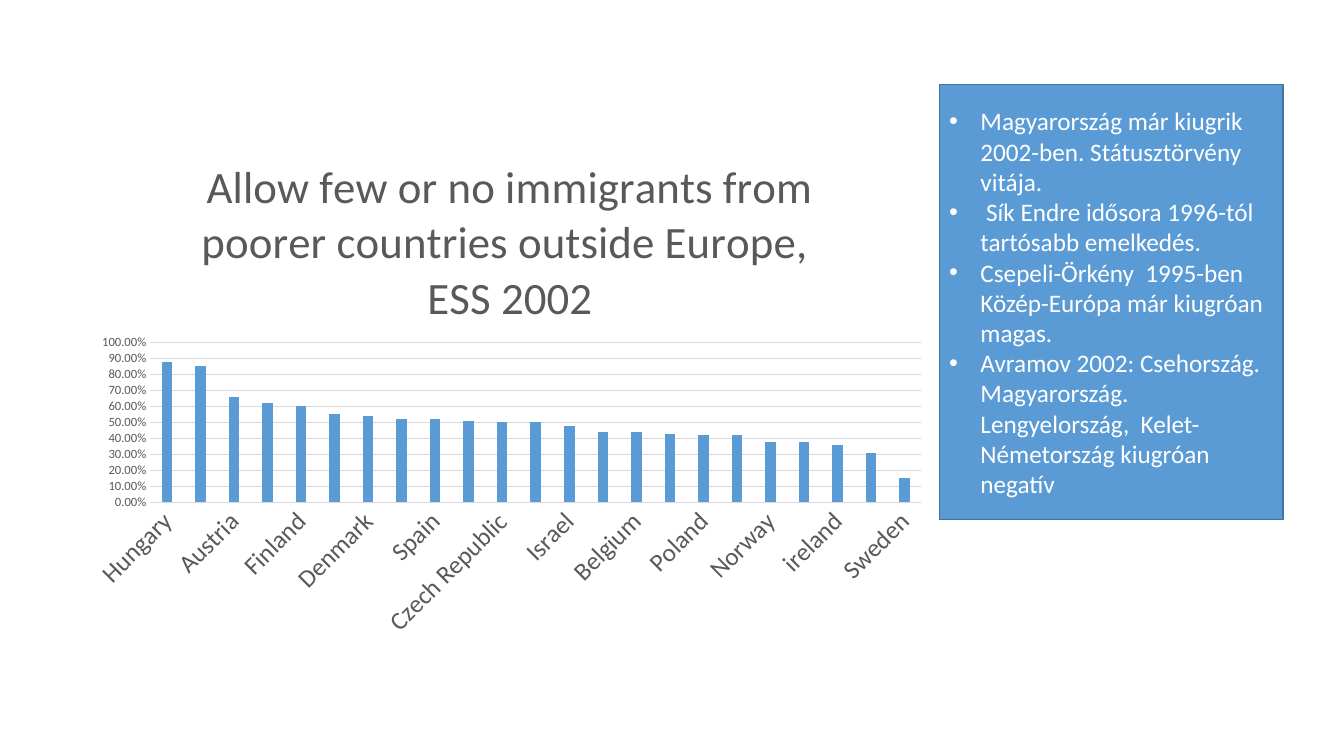
from typing import NamedTuple

import lxml.etree
import pptx
import pptx.chart.axis
import pptx.chart.chart
import pptx.chart.data
import pptx.dml.color
import pptx.enum.chart
import pptx.enum.shapes
import pptx.enum.text
import pptx.oxml
import pptx.oxml.ns
import pptx.slide
import pptx.text.text
import pptx.util
from pptx.util import Cm, Pt

FONT = "Calibri"
BLUE, DARK_BLUE = "5B9BD5", "43739E"
GREY, PALE_GREY, WHITE = "595959", "D9D9D9", "FFFFFF"


class Country(NamedTuple):
    name: str
    share: float


class Area(NamedTuple):
    left: float
    top: float
    width: float
    height: float

    def lengths(self) -> list[pptx.util.Length]:
        return [Cm(value) for value in self]


COUNTRIES = [
    Country("Hungary", 0.88),
    Country("greece", 0.85),
    Country("Austria", 0.66),
    Country("Portugal", 0.62),
    Country("Finland", 0.6),
    Country("Luxembourg", 0.55),
    Country("Denmark", 0.54),
    Country("United Kingdom", 0.52),
    Country("Spain", 0.52),
    Country("France", 0.51),
    Country("Czech Republic", 0.5),
    Country("total", 0.5),
    Country("Israel", 0.48),
    Country("Netherlands", 0.44),
    Country("Belgium", 0.44),
    Country("Slovenia", 0.43),
    Country("Poland", 0.42),
    Country("Germany", 0.42),
    Country("Norway", 0.38),
    Country("Italy", 0.38),
    Country("ireland", 0.36),
    Country("Switzerland", 0.31),
    Country("Sweden", 0.15),
]
CHART_TITLE = "Allow few or no immigrants from poorer countries outside Europe,  ESS 2002"
REMARKS = [
    "Magyarország már kiugrik 2002-ben. Státusztörvény vitája.",
    " Sík Endre idősora 1996-tól tartósabb emelkedés.",
    "Csepeli-Örkény  1995-ben Közép-Európa már kiugróan magas.",
    "Avramov 2002: Csehország. Magyarország. Lengyelország,  Kelet- Németország kiugróan negatív",
]
CHART_AREA = Area(2.06, 3.3, 21.59, 13)
REMARKS_AREA = Area(23.67, 2.13, 8.66, 10.97)
PLOT_SHARES = {"x": 0.08, "y": 0.41, "w": 0.9, "h": 0.31}


def rgb(color: str) -> pptx.dml.color.RGBColor:
    return pptx.dml.color.RGBColor.from_string(color)


def style_font(font: pptx.text.text.Font, size: float, color: str) -> None:
    font.name = FONT
    font.size = Pt(size)
    font.bold = False
    font.color.rgb = rgb(color)


def style_line(line: pptx.dml.line.LineFormat, color: str, width: float) -> None:
    line.color.rgb = rgb(color)
    line.width = Pt(width)


def place_plot(chart: pptx.chart.chart.Chart) -> None:
    qn = pptx.oxml.ns.qn
    plot_area = chart._chartSpace.chart.plotArea
    for old_layout in plot_area.findall(qn("c:layout")):
        plot_area.remove(old_layout)
    layout = lxml.etree.Element(qn("c:layout"))
    manual = lxml.etree.SubElement(layout, qn("c:manualLayout"))
    settings = {"layoutTarget": "inner", "xMode": "edge", "yMode": "edge", **PLOT_SHARES}
    for tag, value in settings.items():
        lxml.etree.SubElement(manual, qn(f"c:{tag}")).set("val", str(value))
    plot_area.insert(0, layout)


def style_axis(axis: pptx.chart.axis._BaseAxis, size: float) -> None:
    axis.major_tick_mark = pptx.enum.chart.XL_TICK_MARK.NONE
    axis.minor_tick_mark = pptx.enum.chart.XL_TICK_MARK.NONE
    style_font(axis.tick_labels.font, size, GREY)


def add_immigration_chart(slide: pptx.slide.Slide) -> None:
    data = pptx.chart.data.CategoryChartData(number_format="0.00%")
    data.categories = [country.name for country in COUNTRIES]
    data.add_series("Series 1", [country.share for country in COUNTRIES])
    chart = slide.shapes.add_chart(
        pptx.enum.chart.XL_CHART_TYPE.COLUMN_CLUSTERED, *CHART_AREA.lengths(), data
    ).chart
    style_font(chart.font, 10, "000000")
    chart.has_legend = False
    chart.has_title = True
    heading = chart.chart_title.text_frame
    heading.text = CHART_TITLE
    style_font(heading.paragraphs[0].font, 32, GREY)
    chart.chart_title.include_in_layout = False
    place_plot(chart)

    countries_axis = chart.category_axis
    style_axis(countries_axis, 18)
    style_line(countries_axis.format.line, PALE_GREY, 0.75)
    countries_axis._element.txPr.bodyPr.set("rot", str(-45 * 60000))

    share_axis = chart.value_axis
    style_axis(share_axis, 9)
    share_axis.minimum_scale, share_axis.maximum_scale = 0, 1
    share_axis.major_unit = 0.1
    share_axis.tick_labels.number_format = "0.00%"
    share_axis.tick_labels.number_format_is_linked = False
    share_axis.format.line.fill.background()
    style_line(share_axis.major_gridlines.format.line, PALE_GREY, 0.75)

    columns = chart.plots[0]
    columns.gap_width = 219
    columns.overlap = -27
    columns.vary_by_categories = False
    columns.series[0].format.fill.solid()
    columns.series[0].format.fill.fore_color.rgb = rgb(BLUE)


def add_bullet(paragraph: pptx.text.text._Paragraph) -> None:
    indent = Cm(0.79)
    properties = paragraph._p.get_or_add_pPr()
    properties.set("marL", str(indent))
    properties.set("indent", str(-indent))
    qn = pptx.oxml.ns.qn
    lxml.etree.SubElement(properties, qn("a:buFont")).set("typeface", "Arial")
    lxml.etree.SubElement(properties, qn("a:buChar")).set("char", "•")


def add_remarks(slide: pptx.slide.Slide) -> None:
    panel = slide.shapes.add_shape(
        pptx.enum.shapes.MSO_SHAPE.RECTANGLE, *REMARKS_AREA.lengths()
    )
    panel.shadow.inherit = False
    panel.fill.solid()
    panel.fill.fore_color.rgb = rgb(BLUE)
    style_line(panel.line, DARK_BLUE, 1)
    frame = panel.text_frame
    frame.word_wrap = True
    frame.vertical_anchor = pptx.enum.text.MSO_ANCHOR.MIDDLE
    for index, remark in enumerate(REMARKS):
        paragraph = frame.add_paragraph() if index else frame.paragraphs[0]
        paragraph.text = remark
        paragraph.alignment = pptx.enum.text.PP_ALIGN.LEFT
        add_bullet(paragraph)
        style_font(paragraph.font, 18, WHITE)


def main() -> None:
    presentation = pptx.Presentation()
    presentation.slide_width, presentation.slide_height = Cm(33.87), Cm(19.05)
    slide = presentation.slides.add_slide(presentation.slide_layouts[6])
    add_immigration_chart(slide)
    add_remarks(slide)
    presentation.save("out.pptx")


if __name__ == "__main__":
    main()
